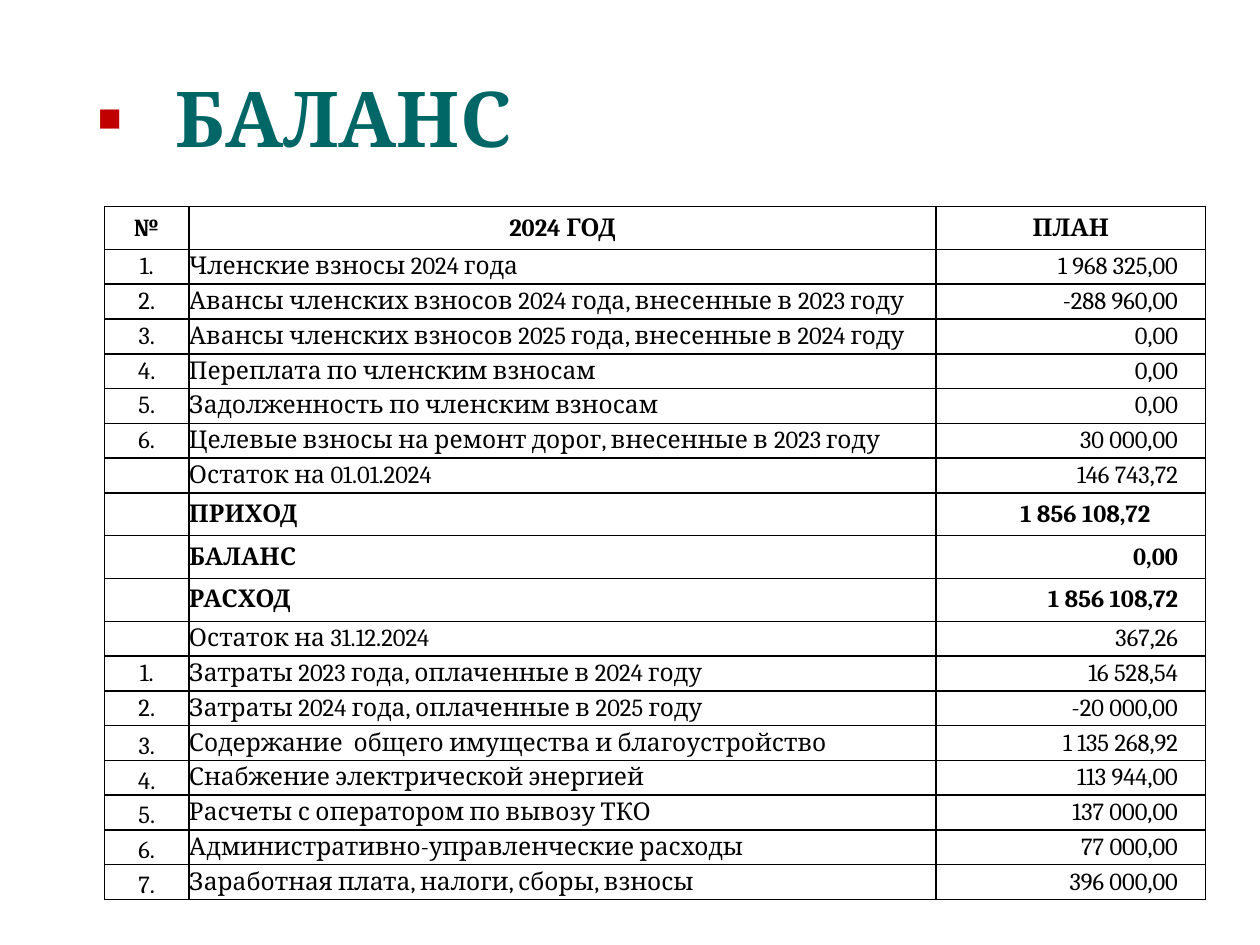
from dataclasses import dataclass

from lxml.etree import SubElement
from pptx import Presentation
from pptx.dml.color import RGBColor
from pptx.enum.text import MSO_ANCHOR, PP_ALIGN
from pptx.oxml.ns import qn
from pptx.util import Inches, Pt

# Content: number, item, amount
TITLE = "БАЛАНС"
HEADER = ("№", "2024 ГОД", "ПЛАН")
INCOME = [
    ("1.", "Членские взносы 2024 года", "1 968 325,00"),
    ("2.", "Авансы членских взносов 2024 года, внесенные в 2023 году", "-288 960,00"),
    ("3.", "Авансы членских взносов 2025 года, внесенные в 2024 году", "0,00"),
    ("4.", "Переплата по членским взносам", "0,00"),
    ("5.", "Задолженность по членским взносам", "0,00"),
    ("6.", "Целевые взносы на ремонт дорог, внесенные в 2023 году", "30 000,00"),
    ("", "Остаток на 01.01.2024", "146 743,72"),
]
TOTALS = [
    ("", "ПРИХОД", "1 856 108,72"),
    ("", "БАЛАНС", "0,00"),
    ("", "РАСХОД", "1 856 108,72"),
]
EXPENSES = [
    ("", "Остаток на 31.12.2024", "367,26"),
    ("1.", "Затраты 2023 года, оплаченные в 2024 году", "16 528,54"),
    ("2.", "Затраты 2024 года, оплаченные в 2025 году", "-20 000,00"),
    ("3.", "Содержание  общего имущества и благоустройство", "1 135 268,92"),
    ("4.", "Снабжение электрической энергией", "113 944,00"),
    ("5.", "Расчеты с оператором по вывозу ТКО", "137 000,00"),
    ("6.", "Административно-управленческие расходы", "77 000,00"),
    ("7.", "Заработная плата, налоги, сборы, взносы", "396 000,00"),
]
ROWS = [HEADER, *INCOME, *TOTALS, *EXPENSES]
STRONG_ROWS = [HEADER, *TOTALS]
LOW_NUMBER_ROWS = EXPENSES[3:]  # numbers sit at the bottom of the cell


@dataclass(frozen=True)
class Theme:
    font: str = "Cambria"
    title_color: str = "006666"
    bullet_color: str = "C00000"
    text_color: str = "000000"
    border_color: str = "000000"
    title_size: int = 44
    table_size: int = 14
    border_width: int = 1


THEME = Theme()

# Table geometry in inches
LEFT, TOP, HEIGHT = 0.83, 1.64, 5.5
COLUMN_WIDTHS = (0.67, 5.93, 2.14)
COLUMN_ALIGNS = (PP_ALIGN.CENTER, PP_ALIGN.LEFT, PP_ALIGN.RIGHT)
STRONG_HEIGHT = 0.34
PLAIN_HEIGHT = (HEIGHT - STRONG_HEIGHT * len(STRONG_ROWS)) / (len(ROWS) - len(STRONG_ROWS))
AMOUNT_INDENT = 0.22


def add_span(para, text, size, color, bold):
    span = para.add_run()
    span.text = text
    span.font.name = THEME.font
    span.font.size = Pt(size)
    span.font.bold = bold
    span.font.color.rgb = RGBColor.from_string(color)


def add_color(parent, color):
    SubElement(parent, qn("a:srgbClr"), val=color)


def add_title(page):
    box = page.shapes.add_textbox(Inches(0.67), Inches(0.3), Inches(9), Inches(1.25))
    frame = box.text_frame
    frame.word_wrap = True
    frame.vertical_anchor = MSO_ANCHOR.MIDDLE
    para = frame.paragraphs[0]
    add_span(para, TITLE, THEME.title_size, THEME.title_color, True)
    # Square bullet with a hanging indent
    properties = para._p.get_or_add_pPr()
    properties.set("marL", str(Inches(0.62)))
    properties.set("indent", str(Inches(-0.62)))
    add_color(SubElement(properties, qn("a:buClr")), THEME.bullet_color)
    SubElement(properties, qn("a:buFont"), typeface="Arial")
    SubElement(properties, qn("a:buChar"), char="▪")


def add_borders(cell):
    properties = cell._tc.get_or_add_tcPr()
    for position, side in enumerate(("lnL", "lnR", "lnT", "lnB")):
        line = properties.makeelement(qn(f"a:{side}"), {"w": str(Pt(THEME.border_width))})
        add_color(SubElement(line, qn("a:solidFill")), THEME.border_color)
        properties.insert(position, line)


def fill_cell(cell, row, column):
    cell.fill.background()
    cell.margin_left = cell.margin_right = cell.margin_top = cell.margin_bottom = 0
    cell.vertical_anchor = MSO_ANCHOR.MIDDLE
    if column == 0 and row in LOW_NUMBER_ROWS:
        cell.vertical_anchor = MSO_ANCHOR.BOTTOM
    para = cell.text_frame.paragraphs[0]
    para.alignment = PP_ALIGN.CENTER if row is HEADER else COLUMN_ALIGNS[column]
    if column == 2 and row is not HEADER:
        # The income total is set in twice as far
        steps = 2 if row is TOTALS[0] else 1
        cell.margin_right = Inches(AMOUNT_INDENT * steps)
    if row[column]:
        add_span(para, row[column], THEME.table_size, THEME.text_color, row in STRONG_ROWS)
    else:
        # Keeps an empty cell from stretching its row
        SubElement(para._p, qn("a:endParaRPr"), sz=str(THEME.table_size * 100))
    add_borders(cell)


def add_balance_table(page):
    table = page.shapes.add_table(
        len(ROWS), len(COLUMN_WIDTHS), Inches(LEFT), Inches(TOP),
        Inches(sum(COLUMN_WIDTHS)), Inches(HEIGHT),
    ).table
    table.first_row = table.horz_banding = False
    for column, width in zip(table.columns, COLUMN_WIDTHS):
        column.width = Inches(width)
    for index, row in enumerate(ROWS):
        height = STRONG_HEIGHT if row in STRONG_ROWS else PLAIN_HEIGHT
        table.rows[index].height = Inches(height)
        for column in range(len(row)):
            fill_cell(table.cell(index, column), row, column)


def main():
    deck = Presentation()
    deck.slide_width, deck.slide_height = Inches(10), Inches(7.5)
    page = deck.slides.add_slide(deck.slide_layouts[6])
    add_title(page)
    add_balance_table(page)
    deck.save("out.pptx")


if __name__ == "__main__":
    main()
